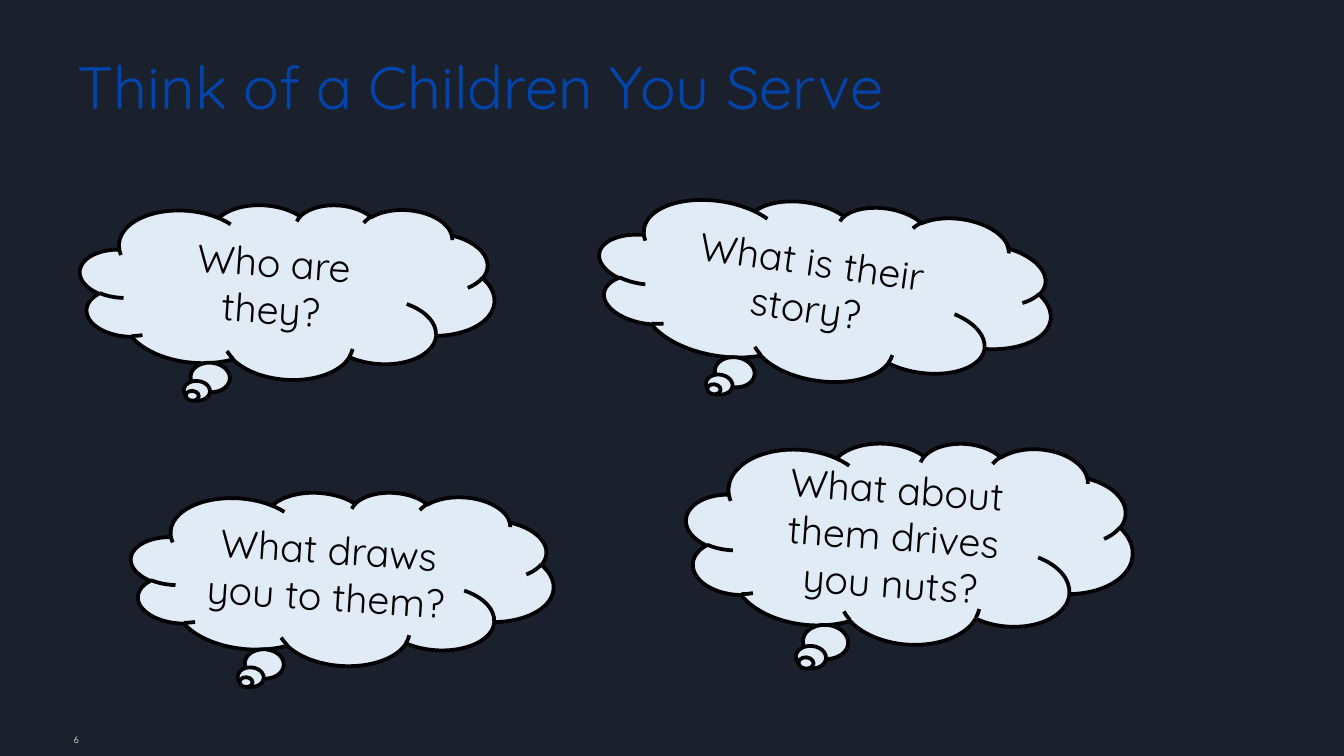
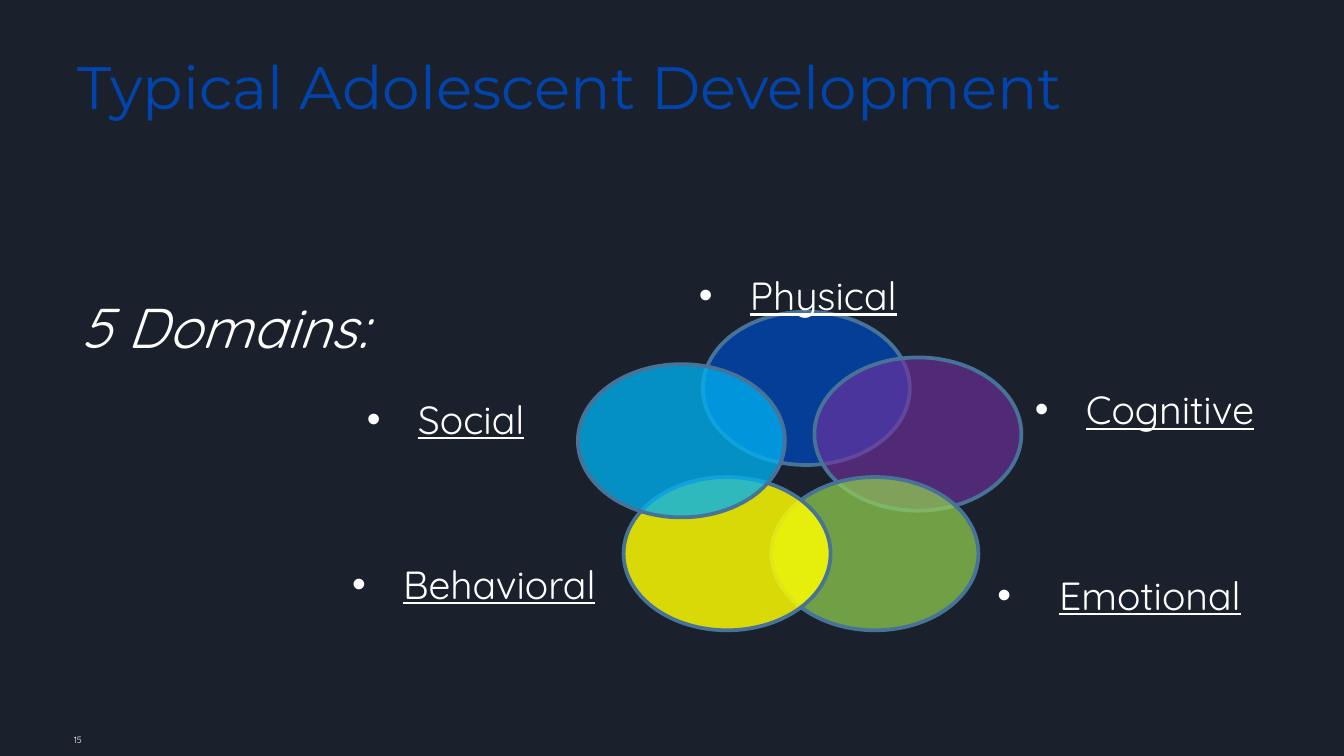
from dataclasses import dataclass
from math import cos, radians, sin

from lxml import etree
from pptx import Presentation
from pptx import util as u
from pptx.dml.color import RGBColor
from pptx.enum import shapes, text
from pptx.oxml.ns import qn

PX = 9144
SLIDE_WIDTH = 1000 * PX
SLIDE_HEIGHT = SLIDE_WIDTH * 9 // 16
INSET = 5
BODY_FONT = "Quicksand"
COLORS = {
    "background": "1B212C",
    "title": "0145AC",
    "light": "FFFFFF",
    "dark": "000000",
    "cloud": "E0EBF6",
    "oval_line": "487399",
    "blue": "0145AC",
    "purple": "7030A0",
    "green": "92D050",
    "yellow": "FFFF00",
    "cyan": "00B0F0",
}


@dataclass(frozen=True)
class Style:
    size: float
    color: str = "light"
    font: str = BODY_FONT
    italic: bool = False
    underline: bool = False


@dataclass(frozen=True)
class Frame:
    left: float
    top: float
    width: float
    height: float

    def emu(self) -> list[u.Emu]:
        sides = (self.left, self.top, self.width, self.height)
        return [u.Emu(round(side * PX)) for side in sides]


@dataclass(frozen=True)
class Cloud:
    words: str
    frame: Frame
    angle: float


@dataclass(frozen=True)
class Bubble:
    across: float
    down: float
    share: int


@dataclass(frozen=True)
class Oval:
    left: int
    top: int
    color: str
    opacity: int


@dataclass(frozen=True)
class Label:
    words: str
    left: int
    top: int
    width: int
    indent: int = 38


CLOUD_STYLE = Style(21, "dark")
LABEL_STYLE = Style(21, underline=True)
DOMAINS_STYLE = Style(30, italic=True)
NUMBER_STYLE = Style(4.9)

CLOUDS = [
    Cloud("Who are they?", Frame(59, 150, 309, 132), 3.9),
    Cloud("What is their story?", Frame(444, 149, 339, 134), 8),
    Cloud("What draws you to them?", Frame(97, 364, 315, 131), 3.7),
    Cloud("What about them drives you nuts?", Frame(510, 327, 333, 152), 4.2),
]
BUBBLES = [Bubble(-0.17, 0.52, 6), Bubble(-0.2, 0.6, 9), Bubble(-0.21, 0.63, 18)]
BUBBLE_STRETCH = 4 / 3

OVAL_WIDTH, OVAL_HEIGHT = 154, 114
OVALS = [
    Oval(523, 232, "blue", 83),
    Oval(606, 266, "purple", 64),
    Oval(574, 355, "green", 72),
    Oval(464, 355, "yellow", 83),
    Oval(430, 271, "cyan", 78),
]
LABELS = [
    Label("Physical", 515, 197, 206),
    Label("Cognitive", 765, 282, 205),
    Label("Emotional", 737, 420, 215, indent=46),
    Label("Behavioral", 257, 412, 228),
    Label("Social", 268, 289, 149),
]


def rgb(name: str) -> RGBColor:
    return RGBColor.from_string(COLORS[name])


def write(shape, words: str, style: Style):
    frame = shape.text_frame
    frame.word_wrap = True
    frame.margin_left = frame.margin_right = u.Emu(INSET * PX)
    frame.margin_top = frame.margin_bottom = u.Emu(INSET * PX)
    para = frame.paragraphs[0]
    para.text = words
    para.font.name = style.font
    para.font.size = u.Pt(style.size)
    para.font.color.rgb = rgb(style.color)
    para.font.italic = style.italic
    para.font.underline = style.underline
    return para


def add_text(page, words: str, frame: Frame, style: Style):
    box = page.shapes.add_textbox(*frame.emu())
    return box, write(box, words, style)


def add_preset(page, kind, frame: Frame, fill: str, line: str, angle: float = 0):
    shape = page.shapes.add_shape(kind, *frame.emu())
    shape.shadow.inherit = False
    shape.rotation = angle
    shape.fill.solid()
    shape.fill.fore_color.rgb = rgb(fill)
    shape.line.color.rgb = rgb(line)
    shape.line.width = u.Pt(2)
    return shape


def add_page(deck, title: str, number: int, title_font: str):
    page = deck.slides.add_slide(deck.slide_layouts[6])
    page.background.fill.solid()
    page.background.fill.fore_color.rgb = rgb("background")
    number_frame = Frame(50, 543, 22, 17)
    para = add_text(page, str(number), number_frame, NUMBER_STYLE)[1]
    para.line_spacing = 0.8
    title_style = Style(32, "title", title_font)
    box = add_text(page, title, Frame(53, 0, 900, 95), title_style)[0]
    box.text_frame.vertical_anchor = text.MSO_ANCHOR.BOTTOM
    return page


def add_cloud(page, cloud: Cloud) -> None:
    frame = cloud.frame
    shape = add_preset(
        page, shapes.MSO_SHAPE.CLOUD, frame, "cloud", "dark", cloud.angle
    )
    para = write(shape, cloud.words, CLOUD_STYLE)
    para.alignment = text.PP_ALIGN.CENTER
    shape.text_frame.vertical_anchor = text.MSO_ANCHOR.MIDDLE
    turn = radians(cloud.angle)
    for bubble in BUBBLES:
        across, down = bubble.across * frame.width, bubble.down * frame.height
        x = frame.left + frame.width / 2 + across * cos(turn) - down * sin(turn)
        y = frame.top + frame.height / 2 + across * sin(turn) + down * cos(turn)
        height = frame.height / bubble.share
        width = height * BUBBLE_STRETCH
        place = Frame(x - width / 2, y - height / 2, width, height)
        add_preset(
            page, shapes.MSO_SHAPE.OVAL, place, "cloud", "dark", cloud.angle
        )


def add_oval(page, oval: Oval) -> None:
    frame = Frame(oval.left, oval.top, OVAL_WIDTH, OVAL_HEIGHT)
    shape = add_preset(page, shapes.MSO_SHAPE.OVAL, frame, oval.color, "oval_line")
    color = shape._element.spPr.find(qn("a:solidFill")).find(qn("a:srgbClr"))
    etree.SubElement(color, qn("a:alpha"), val=str(oval.opacity * 1000))


def add_label(page, label: Label) -> None:
    box = page.shapes.add_textbox(
        *Frame(label.left, label.top, label.width, 35).emu()
    )
    properties = box.text_frame.paragraphs[0]._p.get_or_add_pPr()
    properties.set("marL", str(label.indent * PX))
    properties.set("indent", str(-label.indent * PX))
    bullet_color = etree.SubElement(properties, qn("a:buClr"))
    etree.SubElement(bullet_color, qn("a:srgbClr"), val=COLORS["light"])
    etree.SubElement(properties, qn("a:buFont"), typeface="Arial")
    etree.SubElement(properties, qn("a:buChar"), char="•")
    write(box, label.words, LABEL_STYLE)


def main() -> None:
    deck = Presentation()
    deck.slide_width = u.Emu(SLIDE_WIDTH)
    deck.slide_height = u.Emu(SLIDE_HEIGHT)

    page = add_page(deck, "Think of a Children You Serve", 6, BODY_FONT)
    for cloud in CLOUDS:
        add_cloud(page, cloud)

    page = add_page(deck, "Typical Adolescent Development", 15, "Montserrat")
    for oval in OVALS:
        add_oval(page, oval)
    for label in LABELS:
        add_label(page, label)
    add_text(page, "5 Domains:", Frame(56, 213, 257, 46), DOMAINS_STYLE)

    deck.save("out.pptx")


if __name__ == "__main__":
    main()
